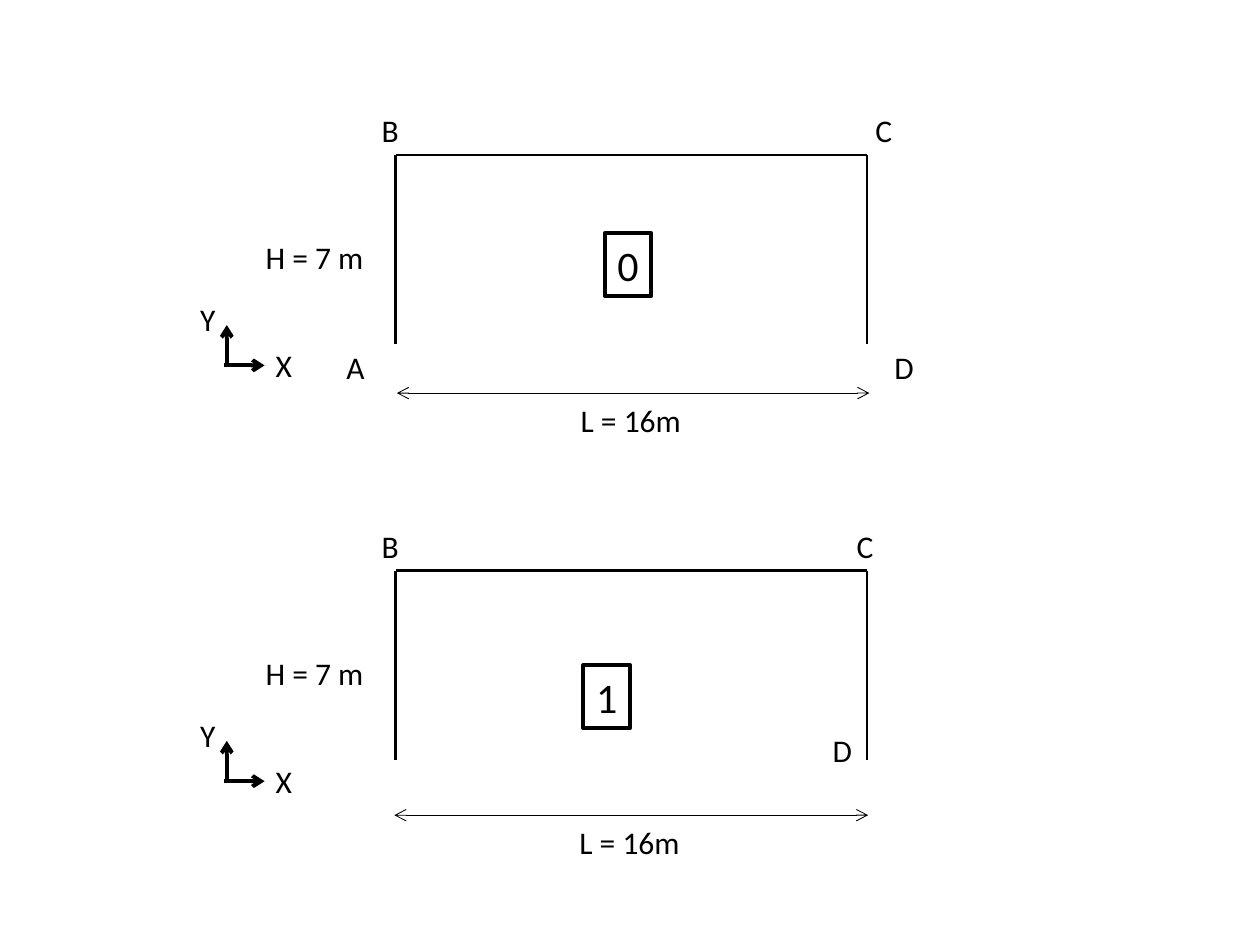
from dataclasses import dataclass

from lxml.etree import SubElement
from pptx import Presentation
from pptx.dml.color import RGBColor
from pptx.enum.shapes import MSO_CONNECTOR as Connector, MSO_SHAPE as Shape
from pptx.enum.text import MSO_AUTO_SIZE as AutoSize, PP_ALIGN as Align
from pptx.oxml.ns import qn
from pptx.util import Inches, Pt


@dataclass(frozen=True)
class Theme:
    ink: RGBColor = RGBColor(0, 0, 0)
    font: str = "Calibri"
    label_size: int = 18
    number_size: int = 24
    frame_line: float = 1.5
    heavy_line: float = 2.25
    span_line: float = 0.5


@dataclass(frozen=True)
class Label:
    text: str
    left: float
    top: float  # measured from the beam
    width: float


@dataclass(frozen=True)
class Frame:
    number: str
    beam_top: float
    number_left: float
    number_top: float  # measured from the beam
    span_left: float
    span_right: float
    span_top: float  # measured from the beam
    labels: tuple[Label, ...]


THEME = Theme()
COLUMN_LEFT, COLUMN_RIGHT, COLUMN_HEIGHT = 3.14, 6.88, 1.5
LABEL_HEIGHT = 0.4
SHARED_LABELS = (Label("B", 2.93, -0.4, 0.34), Label("H = 7 m", 2.01, 0.61, 0.99))
AXIS_LABELS = (Label("Y", 1.49, 1.1, 0.32), Label("X", 2.09, 1.47, 0.33))

FRAMES = (
    Frame("0", 1.23, 4.8, 0.62, 3.15, 6.9, 1.89, (
        Label("A", 2.65, 1.48, 0.35),
        Label("D", 7.0, 1.48, 0.36),
        Label("C", 6.85, -0.4, 0.34),
        Label("L = 16m", 4.51, 1.9, 1.01),
    )),
    Frame("1", 4.53, 4.63, 0.75, 3.13, 6.89, 1.94, (
        Label("D", 6.51, 1.22, 0.36),
        Label("C", 6.7, -0.4, 0.34),
        Label("L = 16m", 4.5, 1.95, 1.01),
    )),
)


def write_text(box, text: str, *, size: int, align=Align.LEFT) -> None:
    """Put one formatted line of text in a box that fits its text."""
    text_frame = box.text_frame
    text_frame.word_wrap = False
    text_frame.auto_size = AutoSize.SHAPE_TO_FIT_TEXT
    para = text_frame.paragraphs[0]
    para.alignment = align
    span = para.add_run()
    span.text = text
    span.font.name = THEME.font
    span.font.size = Pt(size)
    span.font.color.rgb = THEME.ink


def draw_label(shapes, label: Label, beam_top: float) -> None:
    box = shapes.add_textbox(Inches(label.left), Inches(beam_top + label.top),
                             Inches(label.width), Inches(LABEL_HEIGHT))
    write_text(box, label.text, size=THEME.label_size)


def draw_line(shapes, start: tuple[float, float], end: tuple[float, float],
              width: float, arrows: tuple[str, ...] = ()) -> None:
    """Draw a straight line; arrows names its "headEnd" and/or "tailEnd"."""
    line = shapes.add_connector(Connector.STRAIGHT, *map(Inches, start + end))
    line.line.color.rgb = THEME.ink
    line.line.width = Pt(width)
    outline = line.line._get_or_add_ln()
    for arrow in arrows:
        SubElement(outline, qn(f"a:{arrow}"), type="arrow")
    SubElement(line._element.spPr, qn("a:effectLst"))


def draw_axes(page, beam_top: float) -> None:
    axes = page.shapes.add_group_shape().shapes
    for start, end in (((1.8, 1.68), (1.8, 1.35)), ((1.78, 1.67), (2.1, 1.67))):
        draw_line(axes, (start[0], beam_top + start[1]), (end[0], beam_top + end[1]),
                  THEME.heavy_line, ("tailEnd",))
    for label in AXIS_LABELS:
        draw_label(axes, label, beam_top)


def draw_number(page, frame: Frame) -> None:
    box = page.shapes.add_shape(
        Shape.RECTANGLE, Inches(frame.number_left),
        Inches(frame.beam_top + frame.number_top), Inches(0.37), Inches(0.5))
    box.shadow.inherit = False
    box.fill.background()
    box.line.color.rgb = THEME.ink
    box.line.width = Pt(THEME.heavy_line)
    write_text(box, frame.number, size=THEME.number_size, align=Align.CENTER)


def draw_frame(page, frame: Frame) -> None:
    top = frame.beam_top
    # Columns and beam
    portal = page.shapes.add_group_shape().shapes
    for column in (COLUMN_LEFT, COLUMN_RIGHT):
        draw_line(portal, (column, top + COLUMN_HEIGHT), (column, top), THEME.frame_line)
    draw_line(portal, (COLUMN_LEFT, top), (COLUMN_RIGHT, top), THEME.frame_line)
    # Joint names and dimensions
    for label in SHARED_LABELS + frame.labels:
        draw_label(page.shapes, label, top)
    span_top = top + frame.span_top
    draw_line(page.shapes, (frame.span_left, span_top), (frame.span_right, span_top),
              THEME.span_line, ("headEnd", "tailEnd"))
    # Axes and frame number
    draw_axes(page, top)
    draw_number(page, frame)


def main() -> None:
    deck = Presentation()
    deck.slide_width, deck.slide_height = Inches(10), Inches(7.5)
    page = deck.slides.add_slide(deck.slide_layouts[6])
    for frame in FRAMES:
        draw_frame(page, frame)
    deck.save("out.pptx")


if __name__ == "__main__":
    main()
